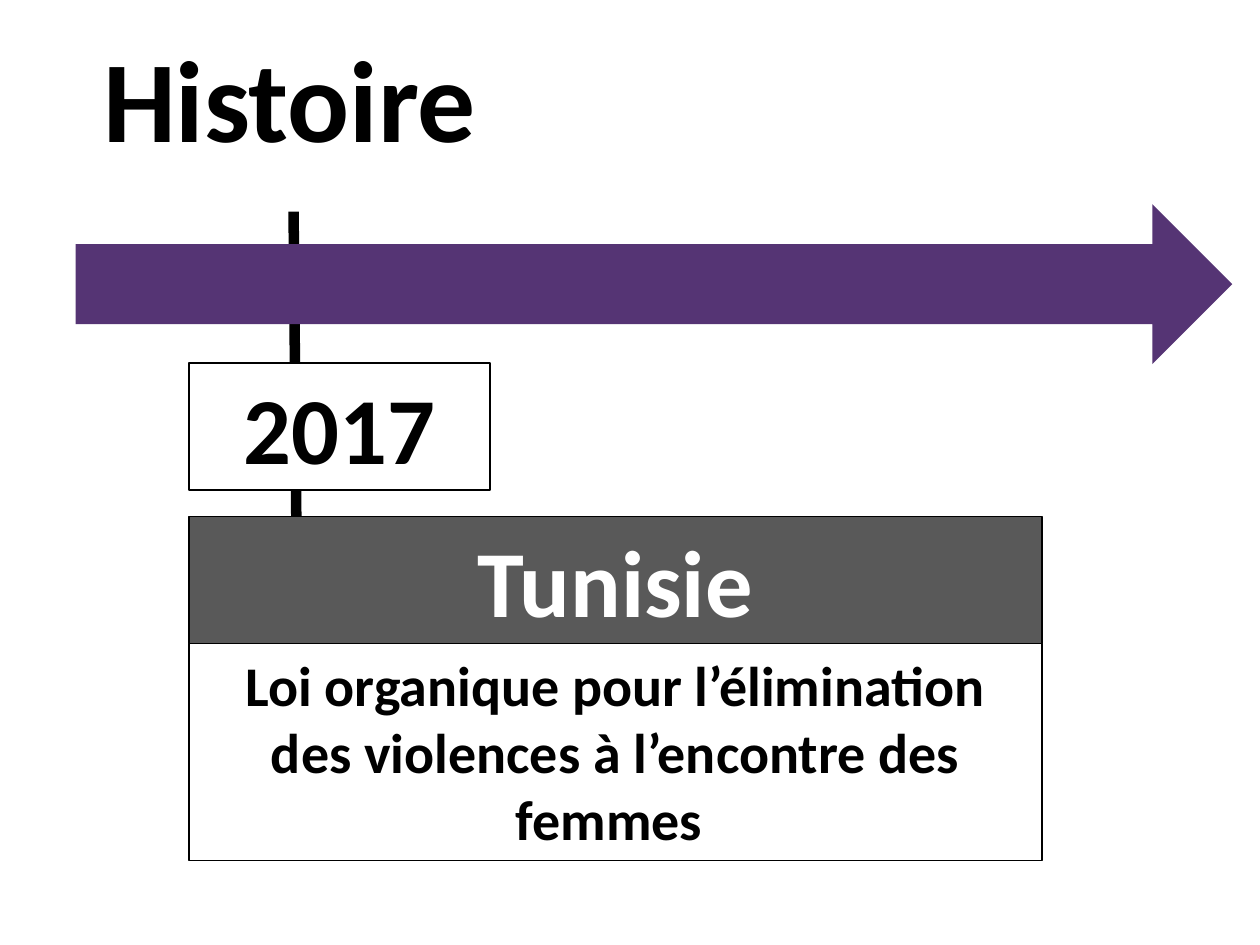
"""Build a timeline slide about a 2017 Tunisian law."""
import pptx
import pptx.dml.color
import pptx.enum.shapes
import pptx.enum.text
import pptx.oxml
import pptx.oxml.ns
import pptx.util

Inches = pptx.util.Inches
Shapes = pptx.enum.shapes.MSO_SHAPE
Anchor = pptx.enum.text.MSO_ANCHOR
Align = pptx.enum.text.PP_ALIGN

BLACK = "000000"
WHITE = "FFFFFF"
PURPLE = "553474"
GREY = "595959"
LEFT = 1.5
LAW_WIDTH = 6.77
LABEL_HEIGHT = 1.01


def color(hex_code):
    """Return the RGB colour for a hex string."""
    return pptx.dml.color.RGBColor.from_string(hex_code)


def write_text(box, text, size, hex_code, anchor=Anchor.TOP, **paragraph_format):
    """Write one bold paragraph into a box."""
    frame = box.text_frame
    frame.word_wrap = True
    frame.vertical_anchor = anchor
    para = frame.paragraphs[0]
    for name, value in paragraph_format.items():
        setattr(para, name, value)
    span = para.add_run()
    span.text = text
    font_format = {"name": "Calibri", "size": pptx.util.Pt(size), "bold": True}
    for name, value in font_format.items():
        setattr(span.font, name, value)
    span.font.color.rgb = color(hex_code)


def add_filled_shape(page, kind, place, fill, line=None):
    """Add a preset shape with a solid fill and an optional thin outline."""
    shape = page.shapes.add_shape(kind, *map(Inches, place))
    shape.shadow.inherit = False
    shape.fill.solid()
    shape.fill.fore_color.rgb = color(fill)
    if line:
        shape.line.color.rgb = color(line)
        shape.line.width = pptx.util.Pt(0.75)
    else:
        shape.line.fill.background()
    return shape


def add_label(page, place, text, size, fill=WHITE, ink=BLACK, anchor=Anchor.TOP):
    """Add an outlined rectangle with centred text."""
    box = add_filled_shape(page, Shapes.RECTANGLE, place, fill, BLACK)
    write_text(box, text, size, ink, anchor, alignment=Align.CENTER)


def add_marker(page, start, end):
    """Add the thick line that marks a date on the timeline."""
    marker = page.shapes.add_connector(
        pptx.enum.shapes.MSO_CONNECTOR.STRAIGHT, *map(Inches, start + end))
    marker.line.color.rgb = color(BLACK)
    marker.line.width = pptx.util.Pt(6)
    properties = marker.element.spPr
    properties.append(pptx.oxml.parse_xml(
        "<a:effectLst %s/>" % pptx.oxml.ns.nsdecls("a")))


def add_title(page, place, text):
    """Add the slide title."""
    box = page.shapes.add_textbox(*map(Inches, place))
    write_text(box, text, 66, BLACK, line_spacing=0.9)


def main():
    """Build and save the deck."""
    deck = pptx.Presentation()
    deck.slide_width = Inches(10)
    deck.slide_height = Inches(7.5)
    page = deck.slides.add_slide(deck.slide_layouts[6])

    add_marker(page, (2.33, 1.68), (2.36, 5.04))
    add_filled_shape(page, Shapes.RIGHT_ARROW, (0.6, 1.62, 9.18, 1.27), PURPLE)
    country_top = 4.1
    add_label(page, (LEFT, country_top + LABEL_HEIGHT, LAW_WIDTH, 1.72),
              "Loi organique pour l’élimination des violences à l’encontre des femmes ", 32)
    add_label(page, (LEFT, country_top, LAW_WIDTH, LABEL_HEIGHT), "Tunisie", 54, GREY, WHITE)
    add_label(page, (LEFT, 2.88, 2.39, LABEL_HEIGHT), "2017", 54, anchor=Anchor.MIDDLE)
    add_title(page, (0.72, 0.29, 8.62, 1.45), "Histoire")
    deck.save("out.pptx")


if __name__ == "__main__":
    main()
